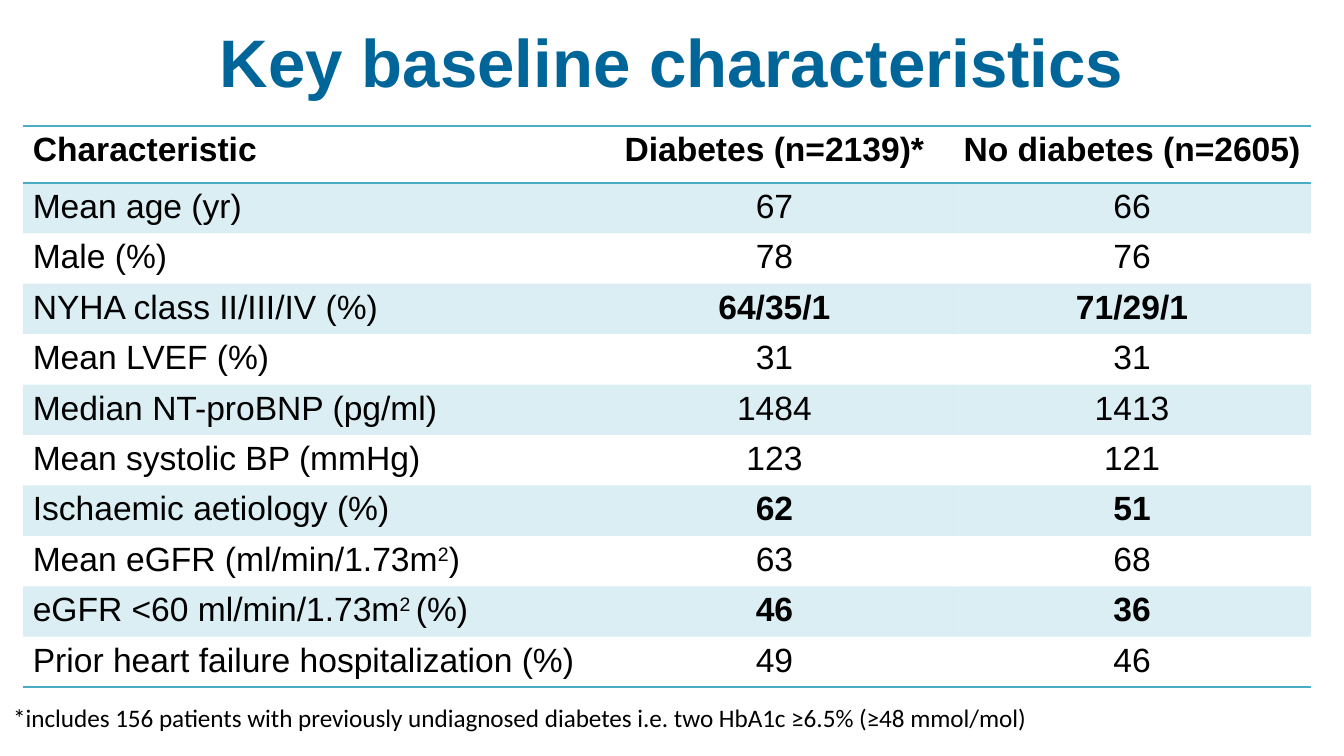
from lxml import etree
from pptx import Presentation
from pptx.dml.color import RGBColor
from pptx.enum.text import MSO_ANCHOR, PP_ALIGN
from pptx.oxml.ns import qn
from pptx.util import Pt

LEFT, CENTER = PP_ALIGN.LEFT, PP_ALIGN.CENTER
TOP, MIDDLE = MSO_ANCHOR.TOP, MSO_ANCHOR.MIDDLE
COLORS = {"title": "006699", "text": "000000", "accent": "4BACC6"}
NO_STYLE = "{2D5ABB26-0587-4C30-8999-92F81FD0307C}"
BAND_ALPHA = 20000
SUPERSCRIPT = 30000

HEADER = ("Characteristic", "Diabetes (n=2139)*", "No diabetes (n=2605)")
ROWS = [
    ("Mean age (yr)", "67", "66"),
    ("Male (%)", "78", "76"),
    ("NYHA class II/III/IV (%)", "64/35/1", "71/29/1"),
    ("Mean LVEF (%)", "31", "31"),
    ("Median NT-proBNP (pg/ml)", "1484", "1413"),
    ("Mean systolic BP (mmHg)", "123", "121"),
    ("Ischaemic aetiology (%)", "62", "51"),
    ("Mean eGFR (ml/min/1.73m^2^)", "63", "68"),
    ("eGFR <60 ml/min/1.73m^2 ^(%)", "46", "36"),
    ("Prior heart failure hospitalization (%)", "49", "46"),
]
BOLD_ROWS = {3, 7, 9}


def style(p, font, size, color, bold=False, align=LEFT):
    """Set the font and alignment of a paragraph."""
    p.alignment = align
    p.font.name, p.font.size, p.font.bold = font, Pt(size), bold
    p.font.color.rgb = RGBColor.from_string(COLORS[color])


def add_text(slide, box, text, font, size, color, bold=False, align=LEFT, anchor=TOP):
    """Add a wrapped one-paragraph text box."""
    tf = slide.shapes.add_textbox(*map(Pt, box)).text_frame
    tf.word_wrap = True
    tf.vertical_anchor = anchor
    p = tf.paragraphs[0]
    p.text = text
    style(p, font, size, color, bold, align)


def add_border(cell, side):
    """Draw a thin accent line on one side of a cell."""
    ln = etree.SubElement(cell._tc.get_or_add_tcPr(), qn(f"a:{side}"), w=str(Pt(1)))
    fill = etree.SubElement(ln, qn("a:solidFill"))
    etree.SubElement(fill, qn("a:srgbClr"), val=COLORS["accent"])


def fill_band(cell):
    """Fill a cell with the translucent accent colour."""
    cell.fill.solid()
    cell.fill.fore_color.rgb = RGBColor.from_string(COLORS["accent"])
    clr = cell._tc.tcPr.find(".//" + qn("a:srgbClr"))
    etree.SubElement(clr, qn("a:alpha"), val=str(BAND_ALPHA))


def write_cell(cell, text, bold, align):
    """Write cell text, raising the parts between carets."""
    cell.margin_left = cell.margin_right = Pt(5.3)
    cell.margin_top = cell.margin_bottom = Pt(2.7)
    p = cell.text_frame.paragraphs[0]
    style(p, "Arial", 18, "text", bold, align)
    for i, part in enumerate(text.split("^")):
        r = p.add_run()
        r.text = part
        if i % 2:
            r.font._element.set("baseline", str(SUPERSCRIPT))


def add_baseline_table(slide, box, label_share=0.4446, header_height=30.5):
    """Add the banded table of characteristics inside the box."""
    x, y, w, h = box
    data = [HEADER, *ROWS]
    table = slide.shapes.add_table(len(data), len(HEADER), *map(Pt, box)).table
    table._tbl.tblPr.find(qn("a:tableStyleId")).text = NO_STYLE
    table.first_row = table.horz_banding = False
    label_width = w * label_share
    for c, col in enumerate(table.columns):
        col.width = Pt((w - label_width) / 2 if c else label_width)
    for i, row in enumerate(table.rows):
        row.height = Pt((h - header_height) / len(ROWS) if i else header_height)
        for c, text in enumerate(data[i]):
            cell = table.cell(i, c)
            bold = i == 0 or (c > 0 and i in BOLD_ROWS)
            write_cell(cell, text, bold, CENTER if c else LEFT)
            if i == 0:
                add_border(cell, "lnT")
            if i in (0, len(ROWS)):
                add_border(cell, "lnB")
            if i % 2:
                fill_band(cell)


def main():
    """Build and save the slide."""
    prs = Presentation()
    prs.slide_width, prs.slide_height = Pt(720), Pt(405)
    slide = prs.slides.add_slide(prs.slide_layouts[6])
    add_text(slide, (36, -1.5, 648, 67.5), "Key baseline characteristics",
             "Arial", 36, "title", True, CENTER, MIDDLE)
    add_baseline_table(slide, (12.3, 67.5, 690, 298.5))
    add_text(slide, (0, 372.5, 720, 23.5),
             "*includes 156 patients with previously undiagnosed diabetes "
             "i.e. two HbA1c ≥6.5% (≥48 mmol/mol)",
             "Calibri", 13.5, "text")
    prs.save("out.pptx")


if __name__ == "__main__":
    main()
